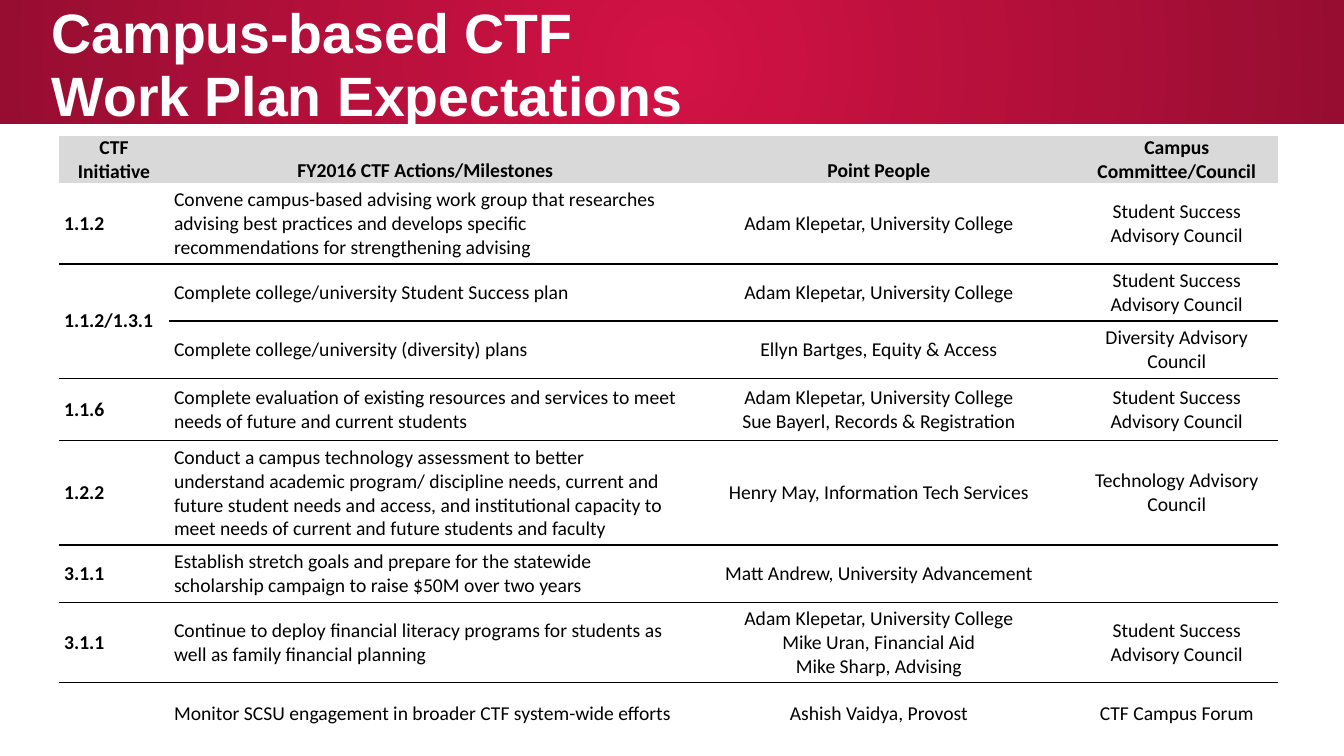
"""Build the campus work plan slide: a red title band above a ruled table."""
from pptx import Presentation
from pptx.dml.color import RGBColor
from pptx.enum.shapes import MSO_SHAPE as Shape
from pptx.enum.text import MSO_ANCHOR as Anchor, PP_ALIGN as Align
from pptx.oxml import parse_xml as to_xml
from pptx.util import Pt

NS = 'xmlns:a="http://schemas.openxmlformats.org/drawingml/2006/main"'
PLAIN = "{2D5ABB26-0587-4C30-8999-92F81FD0307C}"


def color(code):
    return RGBColor.from_string(code)


def style(para, size, name, code, bold):
    para.font.color.rgb = color(code)
    for key, val in {"size": Pt(size), "name": name, "bold": bold}.items():
        setattr(para.font, key, val)


deck = Presentation()
deck.slide_width, deck.slide_height = Pt(960), Pt(540)
slide = deck.slides.add_slide(deck.slide_layouts[6])

band = slide.shapes.add_shape(Shape.RECTANGLE, 0, 0, Pt(960), Pt(88.6))
band.shadow.inherit = False
band.line.fill.background()
band.fill.gradient()
for stop, code in zip(band.fill.gradient_stops, ["D31245", "970D31"]):
    stop.color.rgb = color(code)
for stop, place in zip(band.fill.gradient_stops, [0, 1]):
    stop.position = place
grad = band._element.spPr.find("{*}gradFill")
grad.replace(grad.find("{*}lin"), to_xml(
    f'<a:path {NS} path="circle"><a:fillToRect l="50000" t="50000" r="50000" b="50000"/></a:path>'))

title = slide.shapes.add_textbox(Pt(30), Pt(3), Pt(616), Pt(88.6)).text_frame
title.word_wrap = True
title.vertical_anchor = Anchor.MIDDLE
title.text = "Campus-based CTF \vWork Plan Expectations"
title.paragraphs[0].line_spacing = 0.95
style(title.paragraphs[0], 39.6, "Arial", "FFFFFF", True)

success = "Student Success Advisory Council"
adam = "Adam Klepetar, University College"
rows = [
    (32.4, "CTF Initiative", "FY2016 CTF Actions/Milestones", "Point People",
     "Campus Committee/Council"),
    (44.6, "1.1.2", "Convene campus-based advising work group that researches advising best "
     "practices and develops specific recommendations for strengthening advising", adam, success),
    (33.8, "1.1.2/1.3.1", "Complete college/university Student Success plan", adam, success),
    (33.8, "", "Complete college/university (diversity) plans",
     "Ellyn Bartges, Equity & Access", "Diversity Advisory Council"),
    (44.6, "1.1.6", "Complete evaluation of existing resources and services to meet needs of "
     "future and current students", adam + "\nSue Bayerl, Records & Registration", success),
    (44.6, "1.2.2", "Conduct a campus technology assessment to better understand academic "
     "program/ discipline needs, current and future student needs and access, and institutional "
     "capacity to meet needs of current and future students and faculty",
     "Henry May, Information Tech Services", "Technology Advisory Council"),
    (39.6, "3.1.1", "Establish stretch goals and prepare for the statewide scholarship campaign "
     "to raise $50M over two years", "Matt Andrew, University Advancement", ""),
    (44.6, "3.1.1", "Continue to deploy financial literacy programs for students as well as "
     "family financial planning", adam + "\nMike Uran, Financial Aid\nMike Sharp, Advising",
     success),
    (44.6, "", "Monitor SCSU engagement in broader CTF system-wide efforts",
     "Ashish Vaidya, Provost", "CTF Campus Forum"),
]
ruled = {1, 3, 4, 5, 6, 7}

grid = slide.shapes.add_table(len(rows), 4, Pt(42.2), Pt(97.2), Pt(870.4), Pt(362.6)).table
grid._tbl.tblPr.find("{*}tableStyleId").text = PLAIN
grid.horz_banding = False
for col, width in zip(grid.columns, [78.5, 366.4, 281.5, 144]):
    col.width = Pt(width)

for r, (height, *texts) in enumerate(rows):
    head = r == 0
    grid.rows[r].height = Pt(height)
    for c, text in enumerate(texts):
        cell = grid.cell(r, c)
        side, edge = (5, 0) if head else (3.6, 3.6)
        form = {"margin_left": Pt(side), "margin_right": Pt(side), "margin_top": Pt(edge),
                "margin_bottom": Pt(edge), "text": text,
                "vertical_anchor": Anchor.BOTTOM if head else Anchor.MIDDLE}
        for key, val in form.items():
            setattr(cell, key, val)
        for para in cell.text_frame.paragraphs:
            para.alignment = Align.CENTER if head or c > 1 else Align.LEFT
            style(para, 14, "Calibri", "000000", head or c == 0)
        props = cell._tc.get_or_add_tcPr()
        for tag, row in [("lnT", r - 1), ("lnB", r)]:
            if row in ruled:
                props.append(to_xml(f'<a:{tag} {NS} w="12700"><a:solidFill>'
                                    f'<a:srgbClr val="000000"/></a:solidFill></a:{tag}>'))
        if head:
            cell.fill.solid()
            cell.fill.fore_color.rgb = color("D9D9D9")
        else:
            cell.fill.background()

grid.cell(2, 0).merge(grid.cell(3, 0))
deck.save("out.pptx")
